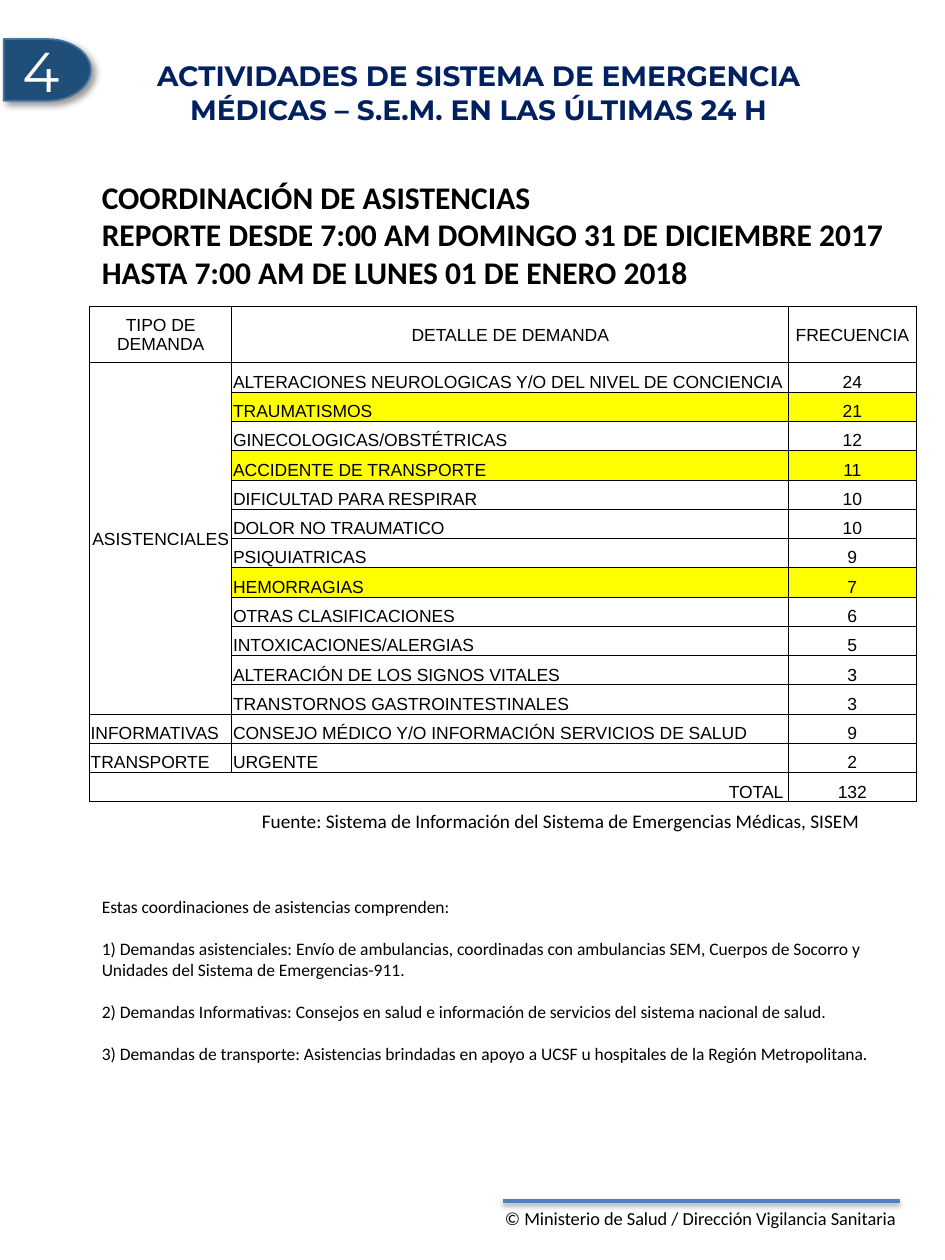
from lxml.etree import SubElement
from pptx import Presentation
from pptx.dml.color import RGBColor
from pptx.enum.shapes import MSO_CONNECTOR, MSO_SHAPE
from pptx.enum.text import MSO_ANCHOR, MSO_AUTO_SIZE, PP_ALIGN
from pptx.oxml.ns import qn
from pptx.util import Inches, Pt

COLORS = {"black": "000000", "white": "FFFFFF", "navy": "002060", "badge": "1F4E79",
          "badge_line": "43739E", "rule": "4F81BD", "highlight": "FFFF00"}

CARE = [("ALTERACIONES NEUROLOGICAS Y/O DEL NIVEL DE CONCIENCIA", 24),
        ("TRAUMATISMOS", 21), ("GINECOLOGICAS/OBSTÉTRICAS", 12),
        ("ACCIDENTE DE TRANSPORTE", 11), ("DIFICULTAD PARA RESPIRAR", 10),
        ("DOLOR NO TRAUMATICO", 10), ("PSIQUIATRICAS", 9), ("HEMORRAGIAS", 7),
        ("OTRAS CLASIFICACIONES", 6), ("INTOXICACIONES/ALERGIAS", 5),
        ("ALTERACIÓN DE LOS SIGNOS VITALES", 3), ("TRANSTORNOS GASTROINTESTINALES", 3)]
HIGHLIGHTED = {"TRAUMATISMOS", "ACCIDENTE DE TRANSPORTE", "HEMORRAGIAS"}


def rgb(name):
    return RGBColor.from_string(COLORS[name])


class Report:
    def __init__(self, slide):
        self.s = slide

    def add_lines(self, tf, lines, size, font="Calibri", color="black", bold=False,
                  align=PP_ALIGN.LEFT, gap=0):
        for i, line in enumerate(lines):
            p = tf.add_paragraph() if i else tf.paragraphs[0]
            p.alignment = align
            p.space_before = Pt(gap if i else 0)
            r = p.add_run()
            r.text = line
            r.font.size, r.font.name, r.font.bold = Pt(size), font, bold
            r.font.color.rgb = rgb(color)

    def title(self, text, box):
        sp = self.s.shapes.title
        sp.left, sp.top, sp.width, sp.height = (Inches(v) for v in box)
        tf = sp.text_frame
        tf.word_wrap, tf.auto_size = True, MSO_AUTO_SIZE.NONE
        tf.vertical_anchor = MSO_ANCHOR.MIDDLE
        tf.margin_left = tf.margin_right = tf.margin_top = tf.margin_bottom = Inches(0.1)
        self.add_lines(tf, [text], 16, "Montserrat", "navy", True, PP_ALIGN.CENTER)

    def text(self, lines, box, size, wrap=True, **style):
        tf = self.s.shapes.add_textbox(*(Inches(v) for v in box)).text_frame
        tf.word_wrap, tf.auto_size = wrap, MSO_AUTO_SIZE.SHAPE_TO_FIT_TEXT
        self.add_lines(tf, lines, size, **style)

    def shadow(self, sp, alpha, blur, dist, angle):
        effects = SubElement(sp._element.spPr, qn("a:effectLst"))
        outer = SubElement(effects, qn("a:outerShdw"), blurRad=str(Pt(blur)),
                           dist=str(Pt(dist)), dir=str(angle * 60000), rotWithShape="0")
        clr = SubElement(outer, qn("a:srgbClr"), val=COLORS["black"])
        SubElement(clr, qn("a:alpha"), val=str(alpha * 1000))

    def rule(self, x1, x2, y):
        c = self.s.shapes.add_connector(MSO_CONNECTOR.STRAIGHT, Inches(x1), Inches(y),
                                        Inches(x2), Inches(y))
        c.line.color.rgb, c.line.width = rgb("rule"), Pt(2)
        self.shadow(c, 38, 3.1, 1.6, 90)

    def badge(self, text, box):
        sp = self.s.shapes.add_shape(MSO_SHAPE.FLOWCHART_DELAY, *(Inches(v) for v in box))
        sp.fill.solid()
        sp.fill.fore_color.rgb = rgb("badge")
        sp.line.color.rgb, sp.line.width = rgb("badge_line"), Pt(1)
        self.shadow(sp, 40, 4, 3, 45)
        sp.text_frame.vertical_anchor = MSO_ANCHOR.MIDDLE
        self.add_lines(sp.text_frame, [text], 32, "Montserrat", "white",
                       align=PP_ALIGN.CENTER)

    def cell(self, cell, text, align, anchor, fill):
        cell.margin_left = cell.margin_right = cell.margin_top = Inches(0.01)
        cell.margin_bottom = 0
        cell.vertical_anchor = anchor
        for side in ("lnL", "lnR", "lnT", "lnB"):
            ln = SubElement(cell._tc.get_or_add_tcPr(), qn("a:" + side), w=str(Pt(0.5)))
            SubElement(SubElement(ln, qn("a:solidFill")), qn("a:srgbClr"), val=COLORS["black"])
        if fill:
            cell.fill.solid()
            cell.fill.fore_color.rgb = rgb(fill)
        else:
            cell.fill.background()
        if text:
            self.add_lines(cell.text_frame, [text], 10, "Arial", align=align)

    def table(self, rows, box, widths, header_height, merges):
        shape = self.s.shapes.add_table(len(rows), len(widths), *(Inches(v) for v in box))
        tbl = shape.table
        tbl.first_row = tbl.horz_banding = False
        for col, w in zip(tbl.columns, widths):
            col.width = Inches(w)
        row_height = (box[3] - header_height) / (len(rows) - 1)
        for i, row in enumerate(tbl.rows):
            row.height = Inches(row_height if i else header_height)
        for (r1, c1), (r2, c2) in merges:
            tbl.cell(r1, c1).merge(tbl.cell(r2, c2))
        for i, row in enumerate(rows):
            for j, text in enumerate(row):
                middle = i == 0 or (i, j) == (1, 0)
                align = PP_ALIGN.CENTER if middle or j == 2 else PP_ALIGN.LEFT
                if text.startswith("TOTAL"):
                    align = PP_ALIGN.RIGHT
                fill = "highlight" if j and row[1] in HIGHLIGHTED else None
                self.cell(tbl.cell(i, j), text, align,
                          MSO_ANCHOR.MIDDLE if middle else MSO_ANCHOR.BOTTOM, fill)


def main():
    prs = Presentation()
    prs.slide_width, prs.slide_height = Inches(7.5), Inches(10)
    report = Report(prs.slides.add_slide(prs.slide_layouts[5]))

    # Footer
    report.rule(3.99, 7.14, 9.53)
    report.text(["© Ministerio de Salud / Dirección Vigilancia Sanitaria"],
                (3.91, 9.53, 3.36, 0.45), 10.5, wrap=False)

    # Section number and title
    report.badge("4", (0.03, 0.31, 0.69, 0.49))
    report.title("ACTIVIDADES DE SISTEMA DE EMERGENCIA MÉDICAS – S.E.M. EN LAS ÚLTIMAS 24 H",
                 (0.77, 0.48, 6.06, 0.51))

    # Demand table
    rows = [("TIPO DE DEMANDA", "DETALLE DE DEMANDA", "FRECUENCIA")]
    rows += [("" if i else "ASISTENCIALES", name, str(n)) for i, (name, n) in enumerate(CARE)]
    rows += [("INFORMATIVAS", "CONSEJO MÉDICO Y/O INFORMACIÓN SERVICIOS DE SALUD", "9"),
             ("TRANSPORTE", "URGENTE", "2"), ("TOTAL ", "", "132")]
    last = len(rows) - 1
    report.table(rows, (0.71, 2.43, 6.56, 3.94), (1.13, 4.42, 1.01), 0.45,
                 [((1, 0), (len(CARE), 0)), ((last, 0), (last, 1))])
    report.text(["Fuente: Sistema de Información del Sistema de Emergencias Médicas, SISEM"],
                (1.98, 6.37, 4.98, 0.29), 11, wrap=False)

    # Report heading
    report.text(["COORDINACIÓN DE ASISTENCIAS",
                 "REPORTE DESDE 7:00 AM DOMINGO 31 DE DICIEMBRE 2017 "
                 "HASTA 7:00 AM DE LUNES 01 DE ENERO 2018"],
                (0.71, 1.36, 6.56, 1.31), 18, bold=True)

    # Explanatory notes
    report.text(["Estas coordinaciones de asistencias comprenden:",
                 "1) Demandas asistenciales: Envío de ambulancias, coordinadas con ambulancias "
                 "SEM, Cuerpos de Socorro y Unidades del Sistema de Emergencias-911.",
                 "2) Demandas Informativas: Consejos en salud e información de servicios del "
                 "sistema nacional de salud.",
                 "3) Demandas de transporte: Asistencias brindadas en apoyo a UCSF u hospitales "
                 "de la Región Metropolitana."],
                (0.71, 7.06, 6.44, 1.45), 10, gap=12)

    prs.save("out.pptx")


if __name__ == "__main__":
    main()
